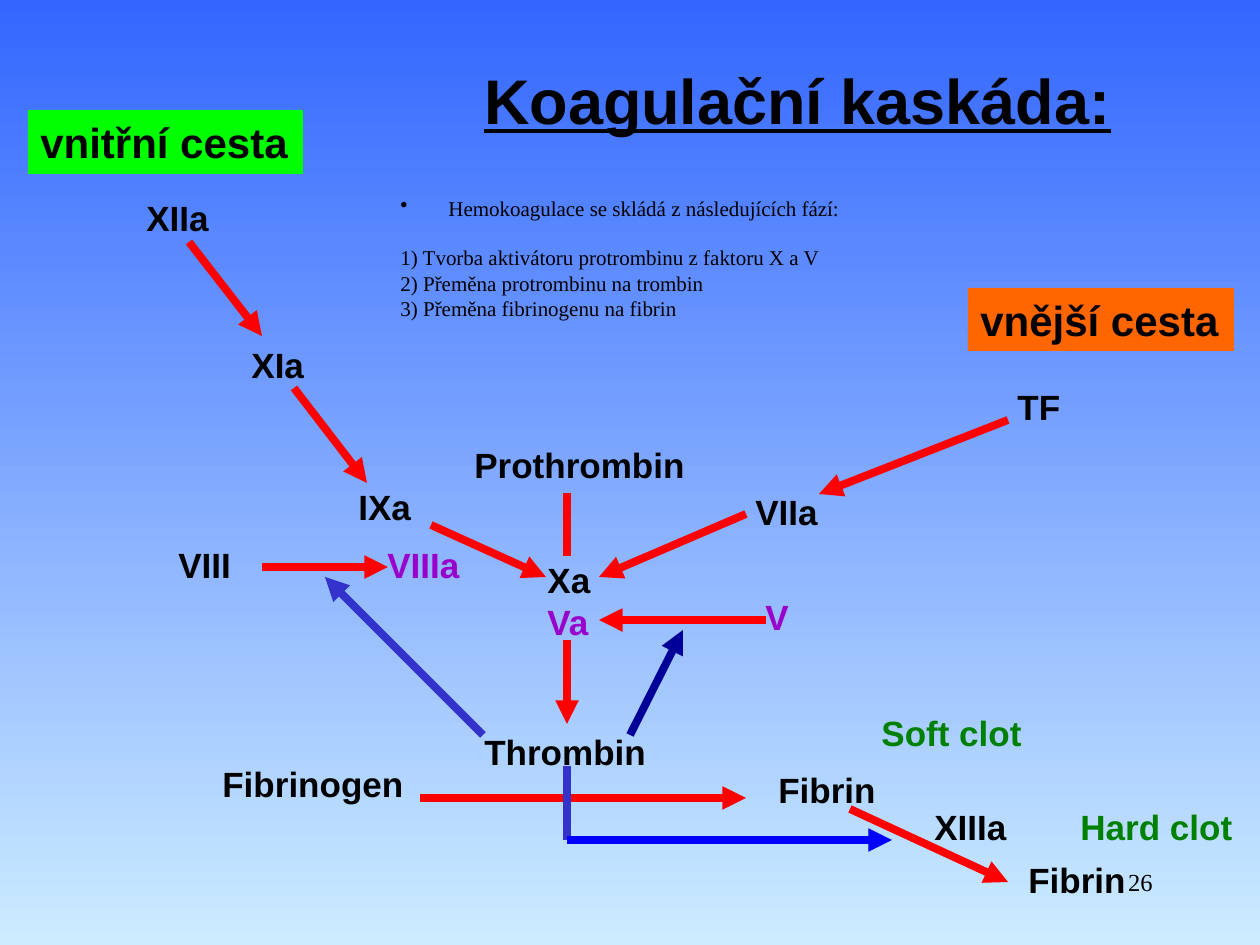
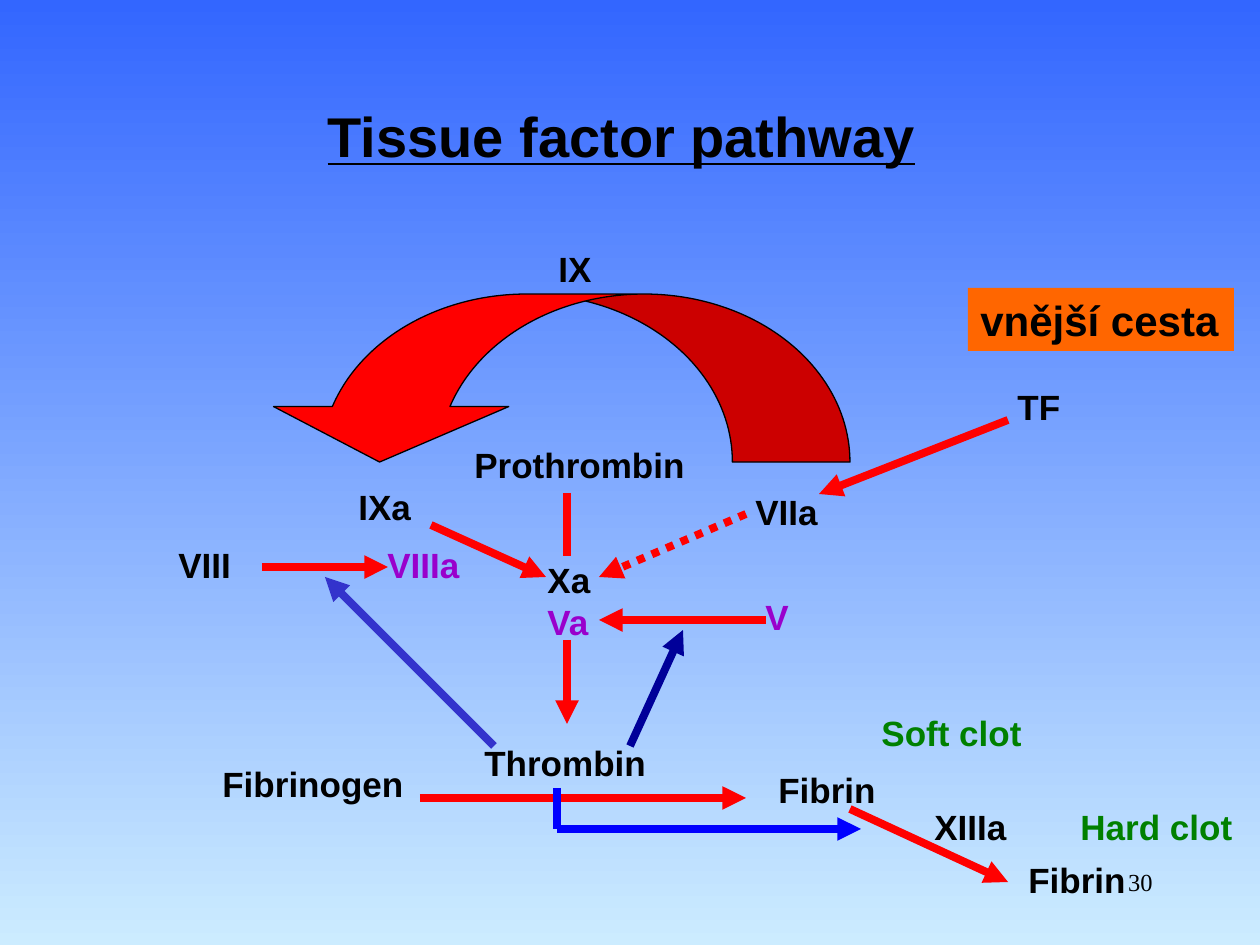
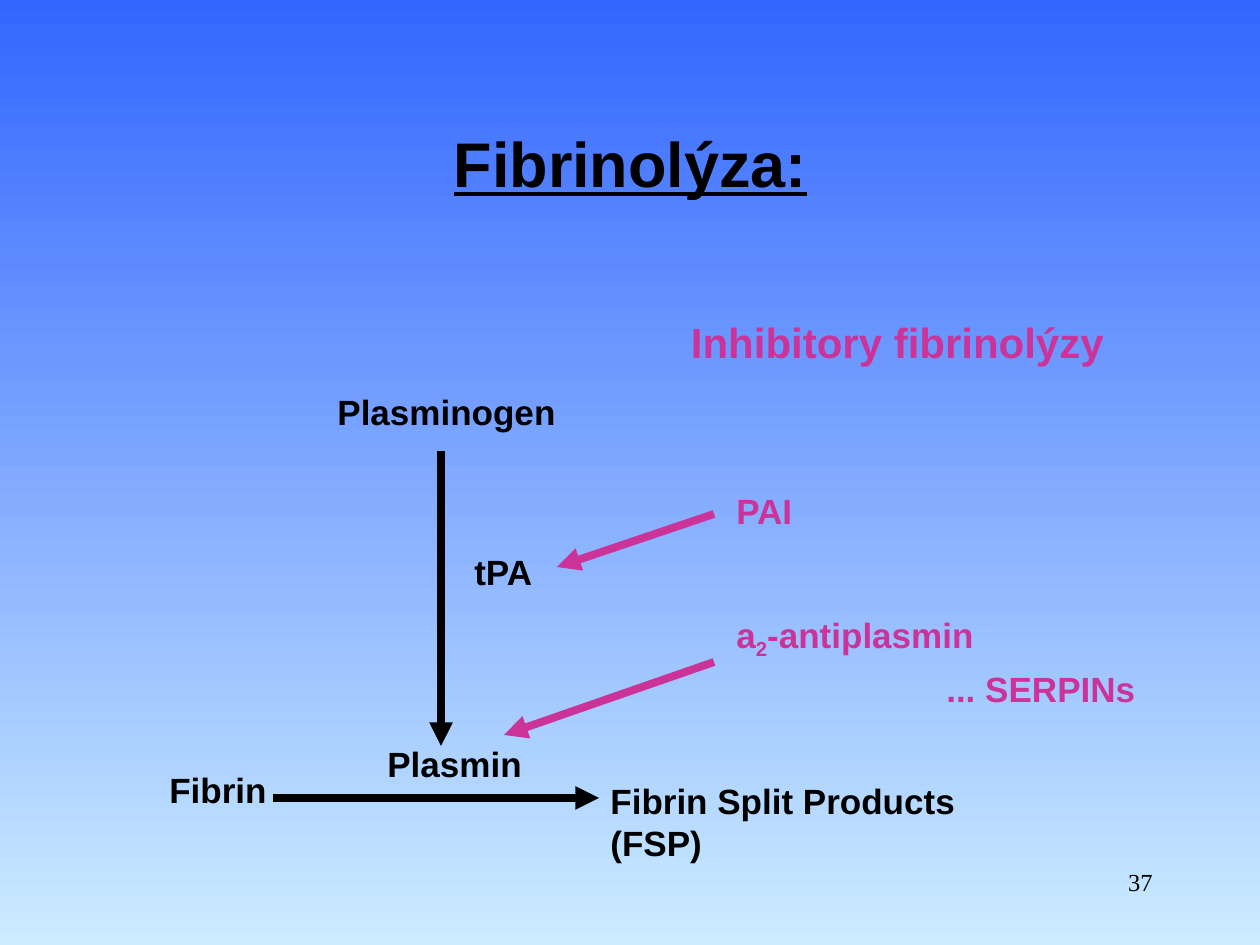
from lxml.etree import SubElement
from pptx import Presentation
from pptx.dml.color import RGBColor
from pptx.enum.dml import MSO_LINE
from pptx.enum.shapes import MSO_CONNECTOR, MSO_SHAPE
from pptx.enum.text import MSO_ANCHOR, MSO_AUTO_SIZE, PP_ALIGN
from pptx.oxml.ns import qn
from pptx.util import Pt

EMU_PER_PX = 914400 / 126
SLIDE_WIDTH, SLIDE_HEIGHT = 1260, 945

SKY_TOP = RGBColor(0x33, 0x66, 0xFF)
SKY_BOTTOM = RGBColor(0xCC, 0xEC, 0xFF)
BLACK = RGBColor(0x00, 0x00, 0x00)
RED = RGBColor(0xFF, 0x00, 0x00)
PURPLE = RGBColor(0x99, 0x00, 0xCC)
GREEN = RGBColor(0x00, 0x80, 0x00)
NAVY = RGBColor(0x00, 0x00, 0x99)
INDIGO = RGBColor(0x33, 0x33, 0xCC)
BLUE = RGBColor(0x00, 0x00, 0xFF)
PINK = RGBColor(0xCC, 0x33, 0x99)
ORANGE = RGBColor(0xFF, 0x66, 0x00)
LIME = RGBColor(0x00, 0xFF, 0x00)

SANS, SERIF = "Arial", "Times New Roman"
LABEL_HEIGHT = 54


def px(length):
    return round(length * EMU_PER_PX)


class Deck:
    """Holds the presentation, its style and the slide being drawn."""

    def __init__(self):
        self.prs = Presentation()
        self.prs.slide_width = px(SLIDE_WIDTH)
        self.prs.slide_height = px(SLIDE_HEIGHT)
        self.slide = None

    def new_slide(self, number):
        self.slide = self.prs.slides.add_slide(self.prs.slide_layouts[6])
        sky = self.slide.background.fill
        sky.gradient()
        sky.gradient_angle = 270
        for stop, color, position in zip(sky.gradient_stops, (SKY_TOP, SKY_BOTTOM), (0, 1)):
            stop.color.rgb = color
            stop.position = position
        self.text(str(number), 903, 861, 262, 63, size=14, font=SERIF,
                  bold=False, align=PP_ALIGN.RIGHT)

    def style(self, paragraph, size, color=BLACK, font=SANS, bold=True, align=PP_ALIGN.LEFT):
        paragraph.alignment = align
        paragraph.font.size = Pt(size)
        paragraph.font.name = font
        paragraph.font.bold = bold
        paragraph.font.color.rgb = color

    def text(self, content, x, y, width, height, wrap=True, grow=False,
             anchor=MSO_ANCHOR.TOP, **style):
        """Adds a text box and returns its first paragraph."""
        frame = self.slide.shapes.add_textbox(px(x), px(y), px(width), px(height)).text_frame
        frame.word_wrap = wrap
        frame.vertical_anchor = anchor
        if grow:
            frame.auto_size = MSO_AUTO_SIZE.SHAPE_TO_FIT_TEXT
        paragraph = frame.paragraphs[0]
        paragraph.text = content
        self.style(paragraph, **style)
        return paragraph

    def label(self, content, x, y, width, color=BLACK, wrap=False):
        return self.text(content, x, y, width, LABEL_HEIGHT, wrap=wrap, grow=True,
                         size=20, color=color)

    def title(self, content, x, y, width=1071, height=158, size=36):
        heading = self.text(content, x, y, width, height, anchor=MSO_ANCHOR.MIDDLE,
                            size=size, align=PP_ALIGN.CENTER)
        heading.font.underline = True

    def banner(self, content, x, y, width, height, fill):
        banner = self.shape(MSO_SHAPE.RECTANGLE, x, y, width, height, fill)
        banner.line.fill.background()
        banner.text_frame.word_wrap = False
        banner.text_frame.vertical_anchor = MSO_ANCHOR.TOP
        paragraph = banner.text_frame.paragraphs[0]
        paragraph.text = content
        self.style(paragraph, size=24)

    def shape(self, preset, x, y, width, height, fill):
        shape = self.slide.shapes.add_shape(preset, px(x), px(y), px(width), px(height))
        shape.shadow.inherit = False
        shape.fill.solid()
        shape.fill.fore_color.rgb = fill
        return shape

    def line(self, x1, y1, x2, y2, color=RED, head=False, dash=None):
        connector = self.slide.shapes.add_connector(
            MSO_CONNECTOR.STRAIGHT, px(x1), px(y1), px(x2), px(y2))
        connector.line.color.rgb = color
        connector.line.width = Pt(4.5)
        if dash:
            connector.line.dash_style = dash
        if head:
            SubElement(connector.line._get_or_add_ln(), qn("a:tailEnd"), type="triangle")
        SubElement(connector._element.spPr, qn("a:effectLst"))

    def arrow(self, x1, y1, x2, y2, color=RED, dash=None):
        self.line(x1, y1, x2, y2, color, head=True, dash=dash)

    def turned_arrow(self, x, top, corner_y, tip_x, stem_color):
        """Goes down from (x, top), then right to a blue tip."""
        self.line(x, top, x, corner_y, stem_color)
        self.arrow(x, corner_y, tip_x, corner_y, BLUE)


def draw_common_pathway(deck, thrombin_shift=0, direct_dash=None):
    """Draws the factors and reactions that both cascade slides show."""
    deck.label("Fibrinogen", 210, 756, 209, wrap=True)
    for factor, x, y, width, color in (
        ("Fibrin", 766, 762, 126, BLACK),
        ("Thrombin", 472, 724 + thrombin_shift, 190, BLACK),
        ("Prothrombin", 462, 437, 238, BLACK),
        ("Xa", 535, 552, 70, BLACK),
        ("Va", 535, 594, 70, PURPLE),
        ("VIIa", 743, 484, 91, BLACK),
        ("TF", 1005, 379, 70, BLACK),
        ("IXa", 346, 479, 80, BLACK),
        ("VIIIa", 375, 537, 99, PURPLE),
        ("XIIIa", 922, 799, 99, BLACK),
        ("Soft clot", 869, 705, 169, GREEN),
        ("Fibrin", 1016, 852, 126, BLACK),
        ("Hard clot", 1068, 799, 180, GREEN),
        ("V", 753, 589, 51, PURPLE),
        ("VIII", 166, 537, 80, BLACK),
    ):
        deck.label(factor, x, y, width, color)

    deck.line(567, 493, 567, 556)
    for reaction in (
        (420, 798, 746, 798),
        (567, 640, 567, 724),
        (1008, 420, 819, 494),
        (431, 525, 546, 577),
        (850, 809, 1008, 882),
        (766, 620, 599, 620),
        (262, 567, 388, 567),
    ):
        deck.arrow(*reaction)
    deck.arrow(746, 514, 599, 577, dash=direct_dash)

    feedback_y = 735 + thrombin_shift
    deck.arrow(630, feedback_y, 683, 630, NAVY)
    deck.arrow(483 + thrombin_shift, feedback_y, 325, 577, INDIGO)
    deck.banner("vnější cesta", 968, 288, 266, 63, ORANGE)


def draw_phases(deck):
    intro = deck.text("Hemokoagulace se skládá z následujících fází:", 388, 189, 484, 140,
                      grow=True, size=12, font=SERIF, bold=False)
    properties = intro._p.get_or_add_pPr()
    properties.set("marL", str(px(48)))
    properties.set("indent", str(px(-48)))
    bullet = properties.makeelement(qn("a:buChar"), {"char": "•"})
    properties.find(qn("a:defRPr")).addprevious(bullet)

    frame = intro._parent
    phases = ("Tvorba aktivátoru protrombinu z faktoru X a V",
              "Přeměna protrombinu na trombin",
              "Přeměna fibrinogenu na fibrin")
    for number, phase in enumerate(phases, 1):
        paragraph = frame.add_paragraph()
        paragraph.text = f"{number}) {phase}"
        deck.style(paragraph, size=12, font=SERIF, bold=False)
        if number == 1:
            paragraph.space_before = Pt(14)


def coagulation_cascade(deck):
    deck.new_slide(26)
    draw_common_pathway(deck)
    deck.label("XIa", 239, 337, 80)
    deck.label("XIIa", 134, 190, 91)
    deck.arrow(294, 388, 367, 483)
    deck.arrow(189, 242, 262, 336)
    deck.turned_arrow(567, 766, 840, 892, INDIGO)
    deck.title("Koagulační kaskáda:", 262, 20)
    deck.banner("vnitřní cesta", 28, 110, 275, 64, LIME)
    draw_phases(deck)


def tissue_factor_pathway(deck):
    deck.new_slide(30)
    draw_common_pathway(deck, thrombin_shift=11, direct_dash=MSO_LINE.ROUND_DOT)
    activation = deck.shape(MSO_SHAPE.CURVED_DOWN_ARROW, 262, 294, 588, 168, RED)
    activation.line.color.rgb = BLACK
    activation.line.width = Pt(0.75)
    for index, value in enumerate((0.7, 1.4, 0.33)):
        activation.adjustments[index] = value
    activation._element.spPr.find(qn("a:xfrm")).set("flipH", "1")
    deck.label("IX", 546, 241, 69, wrap=True)
    deck.turned_arrow(557, 788, 829, 861, BLUE)
    deck.title("Tissue factor pathway", 313, 95, 617, 81, size=32)


def fibrinolysis(deck):
    deck.new_slide(37)
    for substance, x, y, width, color in (
        ("Fibrin", 157, 762, 126, BLACK),
        ("Plasmin", 375, 736, 163, BLACK),
        ("Plasminogen", 325, 384, 256, BLACK),
        ("tPA", 462, 544, 88, BLACK),
        ("PAI", 724, 483, 95, PINK),
        ("... SERPINs", 934, 661, 226, PINK),
    ):
        deck.label(substance, x, y, width, color)
    deck.label("Fibrin Split Products (FSP)", 598, 773, 460, wrap=True)
    antiplasmin = deck.label("a", 724, 607, 294, PINK, wrap=True)
    subscript = antiplasmin.add_run()
    subscript.text = "2"
    subscript._r.get_or_add_rPr().set("baseline", "-25000")
    antiplasmin.add_run().text = "-antiplasmin"

    deck.arrow(273, 798, 599, 798, BLACK)
    deck.arrow(441, 451, 441, 746, BLACK)
    deck.arrow(714, 514, 557, 567, PINK)
    deck.arrow(714, 662, 504, 735, PINK)
    deck.text("Inhibitory fibrinolýzy", 609, 305, 577, 73, anchor=MSO_ANCHOR.MIDDLE,
              size=24, color=PINK, align=PP_ALIGN.CENTER)
    deck.title("Fibrinolýza:", 95, 83)


def main():
    deck = Deck()
    coagulation_cascade(deck)
    tissue_factor_pathway(deck)
    fibrinolysis(deck)
    deck.prs.save("out.pptx")


if __name__ == "__main__":
    main()
